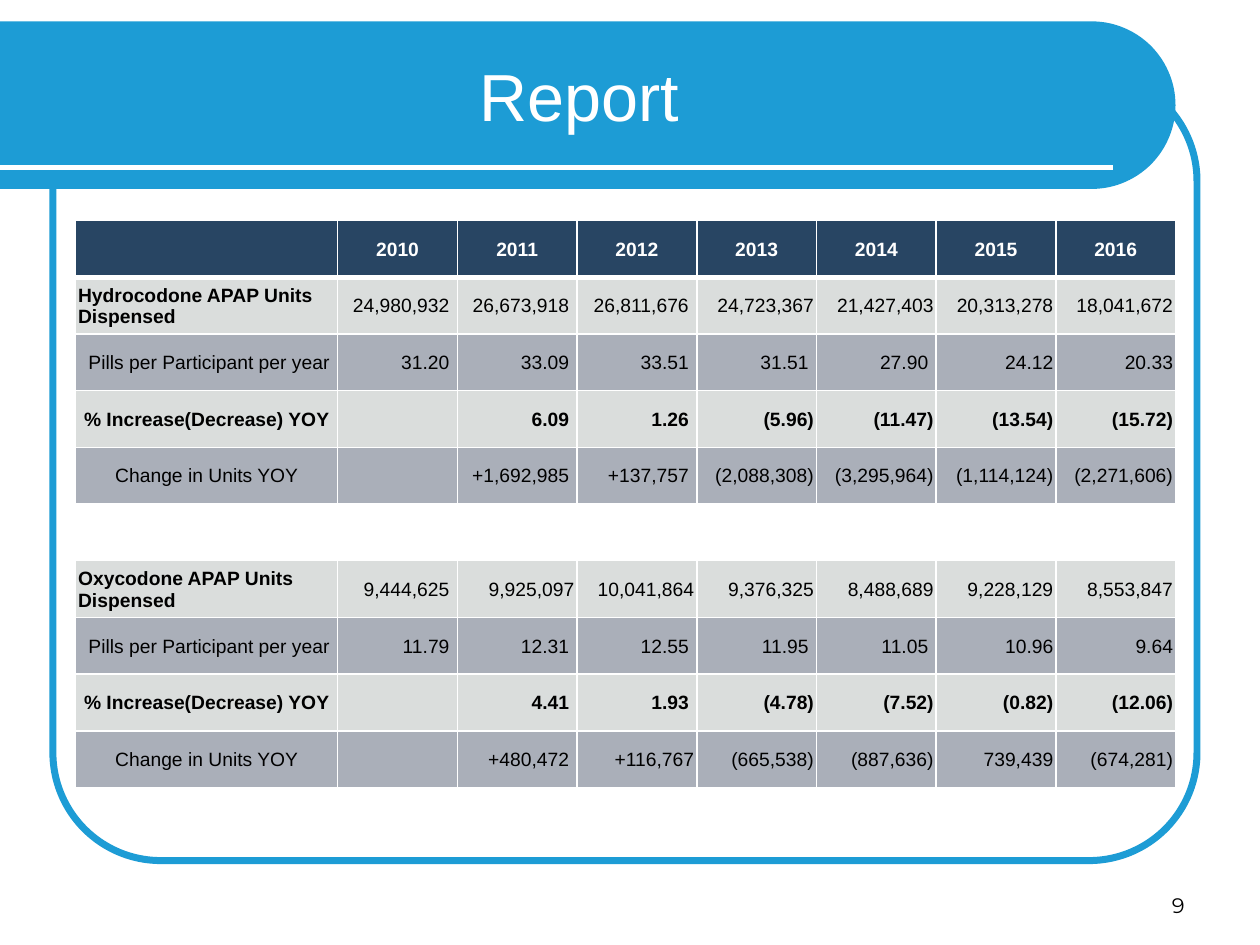
import math
from lxml import etree
from pptx import Presentation, util as u
from pptx.dml.color import RGBColor
from pptx.enum import shapes, text
from pptx.oxml.ns import qn

BLUE = RGBColor(0x1D, 0x9C, 0xD5)
NAVY = RGBColor(0x28, 0x45, 0x63)
LIGHT = RGBColor(0xDA, 0xDD, 0xDC)
GREY = RGBColor(0xAA, 0xAF, 0xB9)
WHITE = RGBColor(0xFF, 0xFF, 0xFF)
BLACK = RGBColor(0, 0, 0)


def format_text(para, font, size, color, align, bold=False):
    para.alignment = align
    for span in para.runs:
        span.font.name = font
        span.font.size = u.Pt(size)
        span.font.color.rgb = color
        span.font.bold = bold


def add_border(cell, side, points):
    line = etree.SubElement(cell._tc.get_or_add_tcPr(), qn(f"a:ln{side}"), w=str(u.Pt(points)))
    fill = etree.SubElement(line, qn("a:solidFill"))
    etree.SubElement(fill, qn("a:srgbClr"), val=str(WHITE))


deck = Presentation()
deck.slide_width = u.Inches(10)
deck.slide_height = u.Inches(7.5)
page = deck.slides.add_slide(deck.slide_layouts[5])

frame = page.shapes.add_shape(
    shapes.MSO_SHAPE.ROUNDED_RECTANGLE, u.Inches(0.42), u.Inches(0.58), u.Inches(9.08), u.Inches(6.25)
)
frame.adjustments[0] = 0.137
frame.shadow.inherit = False
frame.fill.background()
frame.line.color.rgb = BLUE
frame.line.width = u.Pt(4)

radius, center_x, center_y = 0.665, 8.665, 0.835
arc = [
    (center_x + radius * math.cos(math.radians(angle)), center_y + radius * math.sin(math.radians(angle)))
    for angle in range(-90, 91, 3)
]
builder = page.shapes.build_freeform(0, u.Inches(0.17), scale=1.0)
outline = [(u.Inches(x), u.Inches(y)) for x, y in arc] + [(0, u.Inches(1.5))]
builder.add_line_segments(outline, close=True)
banner = builder.convert_to_shape()
banner.shadow.inherit = False
banner.fill.solid()
banner.fill.fore_color.rgb = BLUE
banner.line.fill.background()

rule = page.shapes.add_connector(
    shapes.MSO_CONNECTOR.STRAIGHT, 0, u.Inches(1.33), u.Inches(8.83), u.Inches(1.33)
)
rule.line.color.rgb = WHITE
rule.line.width = u.Pt(3)
etree.SubElement(rule._element.spPr, qn("a:effectLst"))

number_box = page.shapes.add_textbox(u.Inches(7.17), u.Inches(6.83), u.Inches(2.33), u.Inches(0.5))
number_box.text_frame.word_wrap = True
number_box.text_frame.vertical_anchor = text.MSO_ANCHOR.BOTTOM
number_box.text_frame.text = "9"
format_text(number_box.text_frame.paragraphs[0], "Montserrat", 12, BLACK, text.PP_ALIGN.RIGHT)

title = page.shapes.title
title.left, title.top = u.Inches(0.21), u.Inches(0.25)
title.width, title.height = u.Inches(8.77), u.Inches(1)
title.text_frame.text = "Report"
title.text_frame.auto_size = text.MSO_AUTO_SIZE.NONE
title.text_frame.vertical_anchor = text.MSO_ANCHOR.MIDDLE
format_text(title.text_frame.paragraphs[0], "Arial", 38, WHITE, text.PP_ALIGN.CENTER)
page.shapes._spTree.append(title._element)

rows = [
    ["", "2010", "2011", "2012", "2013", "2014", "2015", "2016"],
    ["Hydrocodone APAP Units Dispensed", "24,980,932 ", "26,673,918 ", "26,811,676 ",
     "24,723,367", "21,427,403", "20,313,278", "18,041,672"],
    [" Pills per Participant per year", "31.20 ", "33.09 ", "33.51 ", "31.51 ", "27.90 ", "24.12", "20.33"],
    [" % Increase(Decrease) YOY ", "", "6.09 ", "1.26 ", "(5.96)", "(11.47)", "(13.54)", "(15.72)"],
    [" Change in Units YOY ", "", "+1,692,985 ", "+137,757 ",
     "(2,088,308)", "(3,295,964)", "(1,114,124)", "(2,271,606)"],
    [""] * 8,
    ["Oxycodone APAP Units Dispensed", "9,444,625 ", "9,925,097", "10,041,864",
     "9,376,325", "8,488,689", "9,228,129", "8,553,847"],
    [" Pills per Participant per year", "11.79 ", "12.31 ", "12.55 ", "11.95 ", "11.05 ", "10.96", "9.64"],
    [" % Increase(Decrease) YOY ", "", "4.41 ", "1.93 ", "(4.78)", "(7.52)", "(0.82)", "(12.06)"],
    [" Change in Units YOY ", "", "+480,472 ", "+116,767", "(665,538)", "(887,636)", "739,439", "(674,281)"],
]
HEADER, SPACER = 0, 5
DRUG_ROWS, PERCENT_ROWS = (1, 6), (3, 8)

table = page.shapes.add_table(
    len(rows), 8, u.Inches(0.6), u.Inches(1.75), u.Inches(8.73), u.Inches(4.5)
).table
table.horz_banding = False
for index, column in enumerate(table.columns):
    column.width = u.Inches(0.95 if index else 2.08)

for row_index, values in enumerate(rows):
    table.rows[row_index].height = u.Inches(0.45)
    if row_index == HEADER:
        fill = NAVY
    elif row_index == SPACER:
        fill = WHITE
    else:
        fill = LIGHT if row_index in DRUG_ROWS + PERCENT_ROWS else GREY
    for column_index, value in enumerate(values):
        cell = table.cell(row_index, column_index)
        cell.margin_left = cell.margin_right = u.Inches(0.02)
        cell.margin_top, cell.margin_bottom = u.Inches(0.01), 0
        cell.vertical_anchor = text.MSO_ANCHOR.MIDDLE
        for side in "LRTB":
            under_header = (row_index, side) in ((HEADER, "B"), (HEADER + 1, "T"))
            add_border(cell, side, 3 if under_header else 1)
        cell.fill.solid()
        cell.fill.fore_color.rgb = fill
        if not value:
            continue
        is_label = column_index == 0
        is_drug = is_label and row_index in DRUG_ROWS
        if is_drug:
            align = text.PP_ALIGN.LEFT
        elif is_label or row_index == HEADER:
            align = text.PP_ALIGN.CENTER
        else:
            align = text.PP_ALIGN.RIGHT
        bold = is_drug or row_index == HEADER or row_index in PERCENT_ROWS
        cell.text_frame.text = value
        color = WHITE if row_index == HEADER else BLACK
        format_text(cell.text_frame.paragraphs[0], "Arial", 11, color, align, bold)

deck.save("out.pptx")
